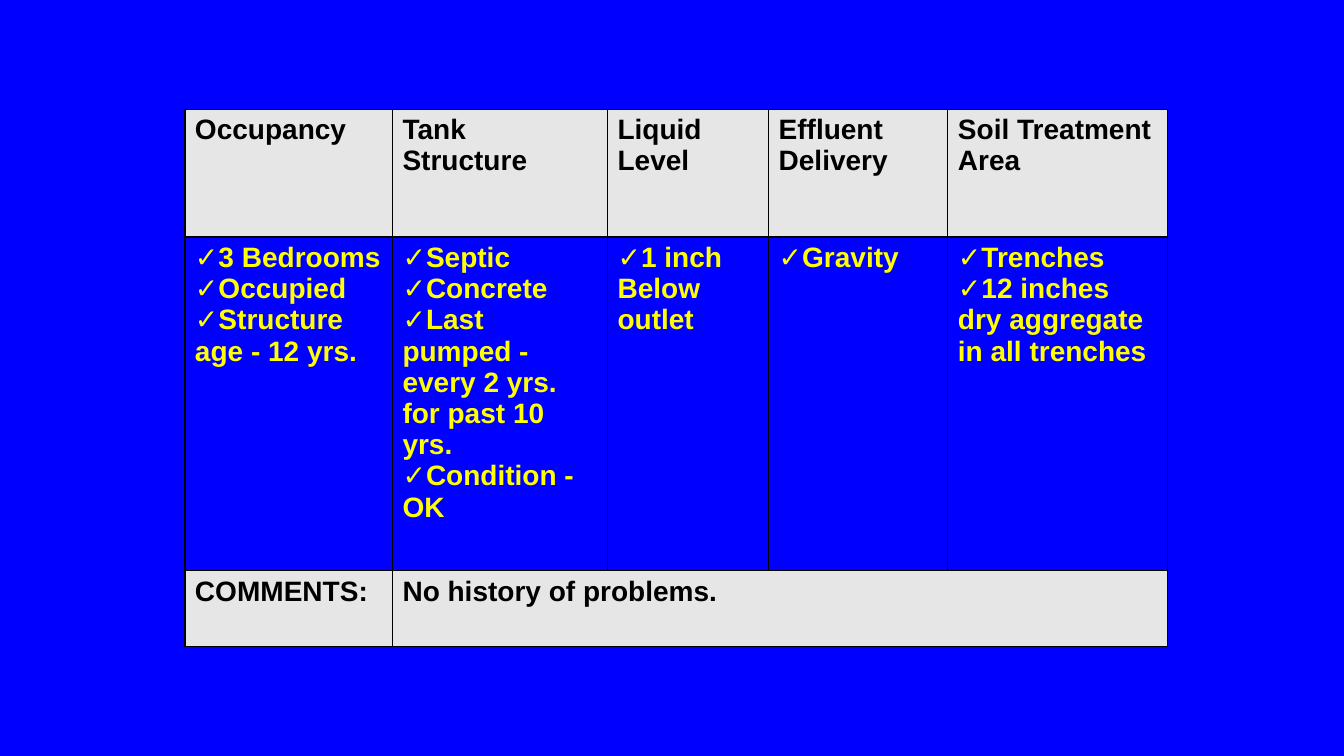
from lxml.etree import SubElement as Sub, Element
from pptx import Presentation
from pptx.dml.color import RGBColor as RGB
from pptx.oxml.ns import qn
from pptx.util import Cm, Pt

# Content
HEAD = ["Occupancy", "Tank Structure", "Liquid Level",
        "Effluent Delivery", "Soil Treatment Area"]
CHECKS = [
    ["3 Bedrooms", "Occupied", "Structure age - 12 yrs."],
    ["Septic", "Concrete", "Last pumped - every 2 yrs. for past 10 yrs.",
     "Condition - OK"],
    ["1 inch Below outlet"],
    ["Gravity"],
    ["Trenches", "12 inches dry aggregate in all trenches"],
]
NOTES = ["COMMENTS:", "No history of problems."]

COLORS = {"back": "0000FF", "band": "E6E6E6", "dark": "000000", "check": "FFFF00"}
FACE = "Arial"
WIDTHS = [5.23, 5.42, 4.06, 4.52, 5.54]
HEIGHTS = [3.22, 8.41, 1.92]
LEFT, TOP = 4.66, 2.75


def color(name):
    return RGB.from_string(COLORS[name])


def edge(cell):
    """Draw a thin dark line on all four sides."""
    props = cell._tc.get_or_add_tcPr()
    for i, side in enumerate(("lnL", "lnR", "lnT", "lnB")):
        line = Element(qn("a:" + side), w=str(Pt(1)))
        fill = Sub(line, qn("a:solidFill"))
        Sub(fill, qn("a:srgbClr"), val=COLORS["dark"])
        props.insert(i, line)


def tick(para):
    """Give a paragraph a check mark and a tab stop."""
    props = para._p.get_or_add_pPr()
    props.set("marL", "0")
    props.set("indent", "0")
    Sub(props, qn("a:buFont"), typeface=FACE)
    Sub(props, qn("a:buChar"), char="✓")
    tabs = Sub(props, qn("a:tabLst"))
    Sub(tabs, qn("a:tab"), pos=str(Cm(0.64)), algn="l")


def write(cell, lines, ink, ticked=False):
    frame = cell.text_frame
    for i, text in enumerate(lines):
        para = frame.add_paragraph() if i else frame.paragraphs[0]
        if ticked:
            tick(para)
        run = para.add_run()
        run.text = text
        font = run.font
        font.name, font.size, font.bold = FACE, Pt(20), True
        font.color.rgb = color(ink)


# Slide
deck = Presentation()
deck.slide_width, deck.slide_height = Cm(33.87), Cm(19.05)
slide = deck.slides.add_slide(deck.slide_layouts[6])
slide.background.fill.solid()
slide.background.fill.fore_color.rgb = color("back")

# Table grid
table = slide.shapes.add_table(
    len(HEIGHTS), len(WIDTHS), Cm(LEFT), Cm(TOP),
    Cm(sum(WIDTHS)), Cm(sum(HEIGHTS))).table
table.first_row = table.horz_banding = False
for col, width in zip(table.columns, WIDTHS):
    col.width = Cm(width)
for row, height in zip(table.rows, HEIGHTS):
    row.height = Cm(height)

# Fills and borders
for r, row in enumerate(table.rows):
    for cell in row.cells:
        if r == 1:
            cell.fill.background()
        else:
            cell.fill.solid()
            cell.fill.fore_color.rgb = color("band")
        edge(cell)

# Text
table.cell(2, 1).merge(table.cell(2, 4))
for c, (title, checks) in enumerate(zip(HEAD, CHECKS)):
    write(table.cell(0, c), [title], "dark")
    write(table.cell(1, c), checks, "check", ticked=True)
for c, note in enumerate(NOTES):
    write(table.cell(2, c), [note], "dark")

deck.save("out.pptx")
